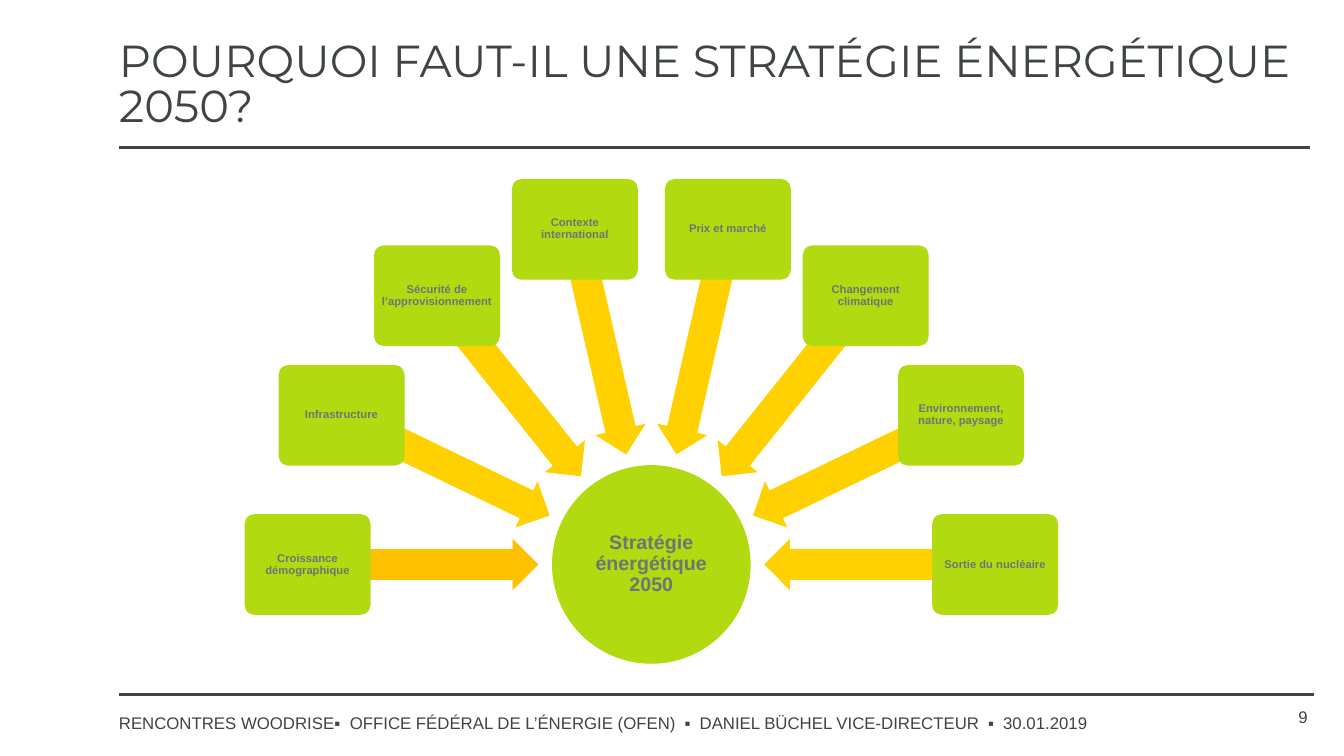
from math import cos, sin, radians

from lxml.etree import SubElement
from pptx import Presentation
from pptx.dml.color import RGBColor
from pptx.enum.shapes import MSO_CONNECTOR, MSO_SHAPE
from pptx.enum.text import MSO_ANCHOR, MSO_AUTO_SIZE, PP_ALIGN
from pptx.oxml.ns import qn
from pptx.util import Inches, Pt

DARK = RGBColor(0x3F, 0x44, 0x44)
GRAY = RGBColor(0x6D, 0x75, 0x75)
GREEN = RGBColor(0xB2, 0xDA, 0x11)
AMBER = RGBColor(0xFF, 0xC0, 0x00)
GOLD = RGBColor(0xFF, 0xD1, 0x00)

LEFT = 1.18
HUB_X, HUB_Y, HUB_SIZE = 6.46, 5.6, 1.97
ARROW_RING, CARD_RING = 2.27, 3.41
CAUSES = [
    "Croissance démographique",
    "Infrastructure",
    "Sécurité de l’approvisionnement",
    "Contexte international",
    "Prix et marché",
    "Changement climatique",
    "Environnement, nature, paysage",
    "Sortie du nucléaire",
]
FOOTER = ("RENCONTRES WOODRISE▪\tOFFICE FÉDÉRAL DE L’ÉNERGIE (OFEN)"
          "\t▪\tDANIEL BÜCHEL VICE-DIRECTEUR\t▪\t30.01.2019")
STOPS = [2.29, 5.61, 5.76, 8.62, 8.77]


class Deck:
    def __init__(self):
        self.show = Presentation()
        self.show.slide_width = Inches(13.33)
        self.show.slide_height = Inches(7.5)
        self.slide = self.show.slides.add_slide(self.show.slide_layouts[5])
        self.shapes = self.slide.shapes

    def set_text(self, shape, text, size, color, face="Arial", bold=False,
                 align=PP_ALIGN.LEFT, anchor=MSO_ANCHOR.TOP, inset=0,
                 space=None, stops=()):
        """Fill a shape with one formatted paragraph; stops are tab stops in inches."""
        frame = shape.text_frame
        frame.word_wrap = True
        frame.auto_size = MSO_AUTO_SIZE.NONE
        frame.vertical_anchor = anchor
        frame.margin_left = frame.margin_right = Inches(inset)
        frame.margin_top = frame.margin_bottom = Inches(inset)
        frame.text = text
        para = frame.paragraphs[0]
        para.alignment = align
        para.line_spacing = space
        if stops:
            tabs = SubElement(para._p.get_or_add_pPr(), qn("a:tabLst"))
            for stop in stops:
                SubElement(tabs, qn("a:tab"), pos=str(Inches(stop)), algn="l")
        font = para.font
        font.name, font.size, font.bold = face, Pt(size), bold
        font.color.rgb = color

    def title(self, text, x, y, w, h):
        box = self.shapes.title
        box.left, box.top = Inches(x), Inches(y)
        box.width, box.height = Inches(w), Inches(h)
        self.set_text(box, text, 32, DARK, face="Montserrat",
                      anchor=MSO_ANCHOR.BOTTOM, space=Pt(32))

    def label(self, text, x, y, w, h, **style):
        box = self.shapes.add_textbox(Inches(x), Inches(y), Inches(w), Inches(h))
        self.set_text(box, text, 12, DARK, **style)

    def rule(self, x, y, end):
        line = self.shapes.add_connector(
            MSO_CONNECTOR.STRAIGHT, Inches(x), Inches(y), Inches(end), Inches(y))
        line.line.color.rgb = DARK
        line.line.width = Pt(2)
        SubElement(line._element.spPr, qn("a:effectLst"))

    def block(self, kind, x, y, w, h, color, adjust=()):
        """Add a plain filled shape centred on x, y."""
        shape = self.shapes.add_shape(
            kind, Inches(x - w / 2), Inches(y - h / 2), Inches(w), Inches(h))
        shape.shadow.inherit = False
        shape.fill.solid()
        shape.fill.fore_color.rgb = color
        shape.line.fill.background()
        for i, value in enumerate(adjust):
            shape.adjustments[i] = value
        return shape

    def hub(self, text):
        disc = self.block(MSO_SHAPE.OVAL, HUB_X, HUB_Y, HUB_SIZE, HUB_SIZE, GREEN)
        self.set_text(disc, text, 14, GRAY, bold=True, align=PP_ALIGN.CENTER,
                      anchor=MSO_ANCHOR.MIDDLE, inset=0.01, space=0.9)

    def arrow(self, angle, color):
        """Add an arrow to the hub; angle turns clockwise from the left side."""
        turn = radians(angle)
        shape = self.block(
            MSO_SHAPE.LEFT_ARROW, HUB_X - ARROW_RING * cos(turn),
            HUB_Y - ARROW_RING * sin(turn), 2.3, 0.51, color, (0.6, 0.5))
        shape.rotation = (180 + angle) % 360

    def card(self, text, angle):
        turn = radians(angle)
        shape = self.block(
            MSO_SHAPE.ROUNDED_RECTANGLE, HUB_X - CARD_RING * cos(turn),
            HUB_Y - CARD_RING * sin(turn), 1.25, 1, GREEN, (0.1,))
        self.set_text(shape, text, 8, GRAY, bold=True, align=PP_ALIGN.CENTER,
                      anchor=MSO_ANCHOR.MIDDLE, inset=0.02, space=0.9)


def main():
    deck = Deck()
    deck.label(FOOTER, LEFT, 7.01, 10.87, 0.31, space=Pt(19), stops=STOPS)
    deck.rule(LEFT, 6.89, 13.03)
    deck.rule(LEFT, 1.46, 12.99)
    deck.label("9", 12.18, 7.01, 0.79, 0.31, align=PP_ALIGN.RIGHT)
    deck.title("POURQUOI FAUT-IL UNE STRATÉGIE ÉNERGÉTIQUE 2050?",
               LEFT, 0.39, 11.81, 0.91)
    deck.hub("Stratégie énergétique 2050")
    step = 180 / (len(CAUSES) - 1)
    for i, cause in enumerate(CAUSES):
        deck.arrow(i * step, GOLD if i else AMBER)
        deck.card(cause, i * step)
    deck.show.save("out.pptx")


if __name__ == "__main__":
    main()
